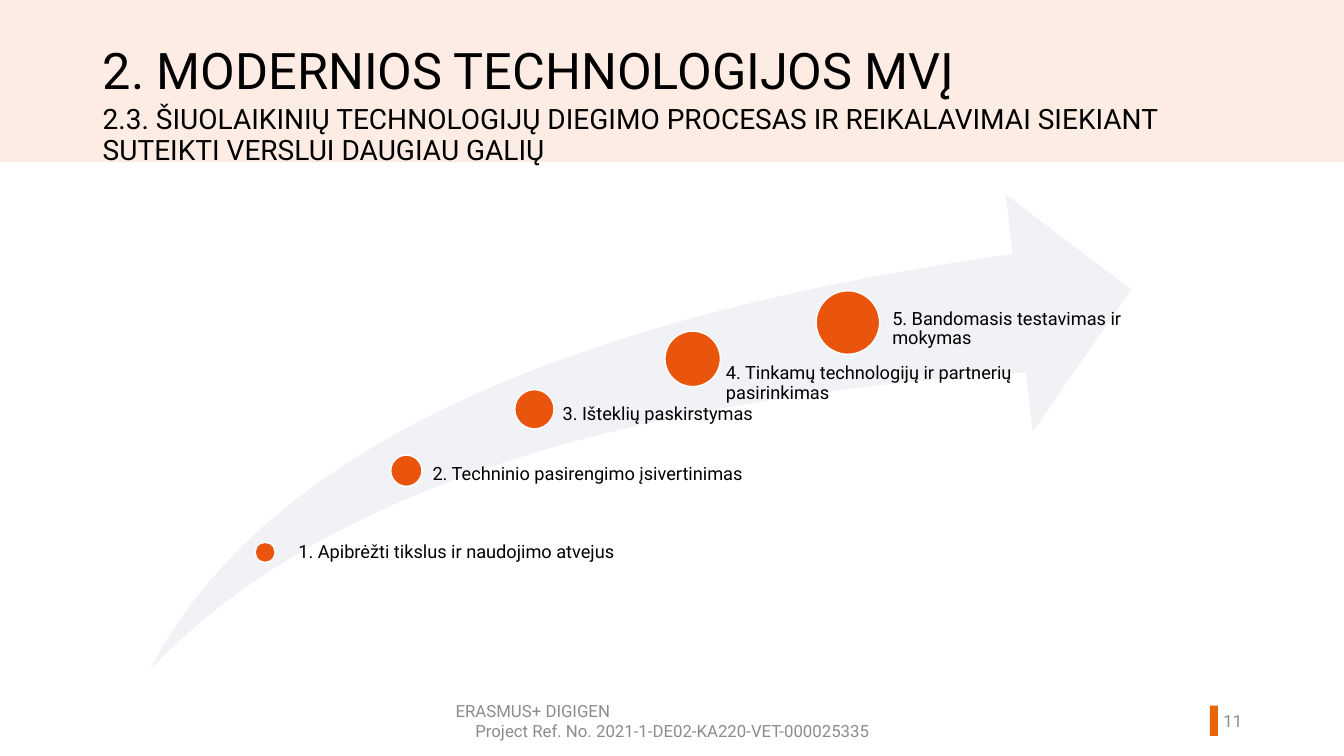
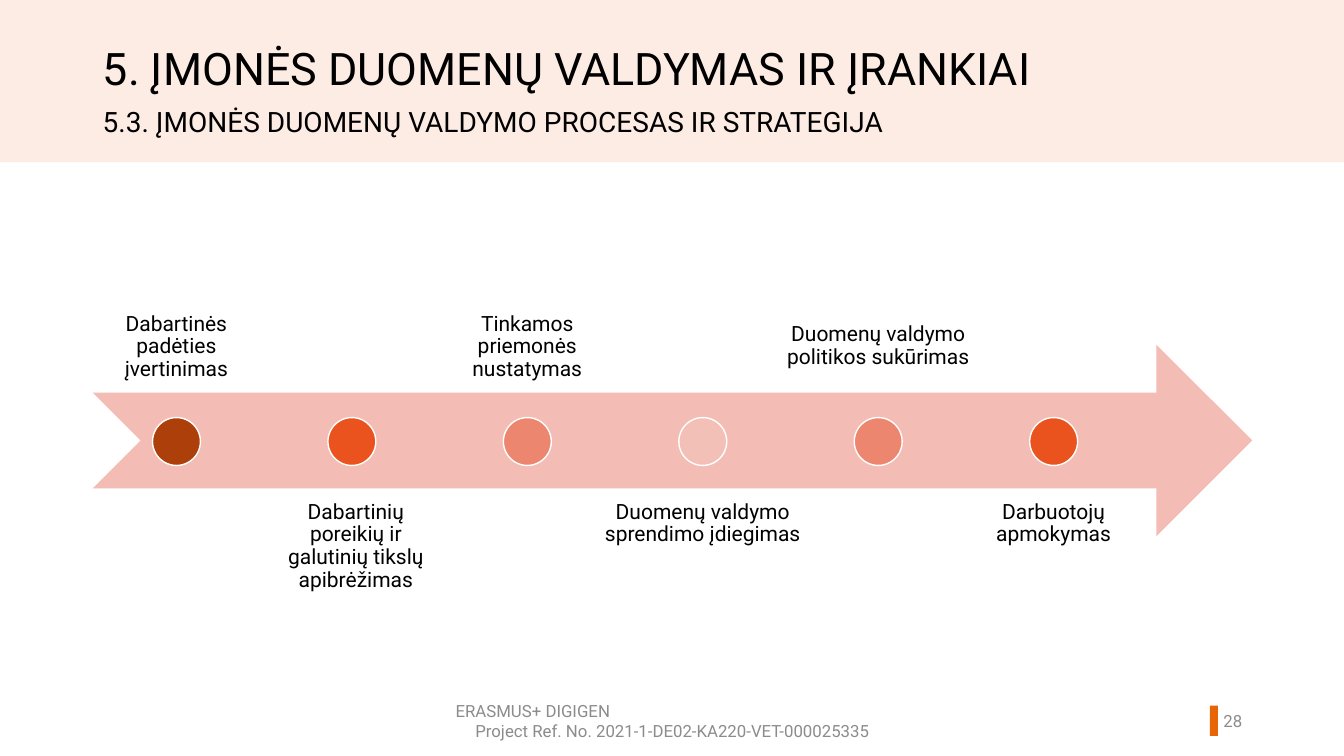
from pptx import Presentation
from pptx.dml.color import RGBColor
from pptx.enum.shapes import MSO_SHAPE
from pptx.enum.text import MSO_ANCHOR, MSO_AUTO_SIZE, PP_ALIGN
from pptx.util import Inches, Pt

FONT = "Roboto"
COLORS = {
    "ink": "000000",
    "muted": "8C8C8C",
    "white": "FFFFFF",
    "band": "FDECE3",
    "marker": "E86507",
    "swoosh": "F0F2F5",
    "step": "E9550D",
    "arrow": "F3BCB4",
    "rust": "AC3F0A",
    "orange": "EA531E",
    "salmon": "EC866E",
    "blush": "F3C0B8",
}
TITLE_BOX = (0.92, 0.41, 10.85, 0.85)
SWOOSH_BOX = (1.49, 1.93, 9.73, 4.71)
TIMELINE_BOX = (0.92, 3.42, 11.5, 1.9)

ADOPTION_STEPS = [
    ("1. Apibrėžti tikslus ir naudojimo atvejus", (1.14, 3.55), 0.2, (1.47, 3.45), 3.36),
    ("2. Techninio pasirengimo įsivertinimas", (2.54, 2.74), 0.31, (2.8, 2.68), 3.32),
    ("3. Išteklių paskirstymas", (3.81, 2.13), 0.39, (4.09, 2.09), 2.82),
    ("4. Tinkamų technologijų ir partnerių pasirinkimas", (5.38, 1.63), 0.55, (5.71, 1.68), 3.52),
    ("5. Bandomasis testavimas ir mokymas", (6.92, 1.27), 0.63, (7.36, 1.14), 2.66),
]
DATA_STAGES = [
    ("Dabartinės padėties įvertinimas", "rust", 1.66, 0, 0),
    ("Dabartinių poreikių ir galutinių tikslų apibrėžimas", "orange", 1.97, 0.04, 0),
    ("Tinkamos priemonės nustatymas", "salmon", 1.66, 0, 0),
    ("Duomenų valdymo sprendimo įdiegimas", "blush", 2.33, 0, 0),
    ("Duomenų valdymo politikos sukūrimas", "salmon", 2.11, 0, -0.12),
    ("Darbuotojų apmokymas", "orange", 1.66, 0, 0),
]


def color(name):
    return RGBColor.from_string(COLORS[name])


def write(box, text, size=12, ink="ink", aligns=(PP_ALIGN.LEFT,),
          anchor=MSO_ANCHOR.TOP, spacing=0.9, insets=(0.1, 0.05)):
    frame = box.text_frame
    frame.text = text
    frame.word_wrap = True
    frame.auto_size = MSO_AUTO_SIZE.NONE
    frame.vertical_anchor = anchor
    frame.margin_left = frame.margin_right = Inches(insets[0])
    frame.margin_top = frame.margin_bottom = Inches(insets[1])
    for para, align in zip(frame.paragraphs, aligns):
        para.alignment = align
        para.line_spacing = spacing
        for span in para.runs:
            span.font.name = FONT
            span.font.size = Pt(size)
            span.font.color.rgb = color(ink)


def add_text(page, area, text, **style):
    box = page.shapes.add_textbox(*map(Inches, area))
    write(box, text, **style)
    return box


def add_figure(page, kind, area, fill, outline=None):
    shape = page.shapes.add_shape(kind, *map(Inches, area))
    shape.shadow.inherit = False
    shape.fill.solid()
    shape.fill.fore_color.rgb = color(fill)
    if outline:
        shape.line.color.rgb = color(outline)
        shape.line.width = Pt(1)
    else:
        shape.line.fill.background()
    return shape


def add_dot(page, center_x, center_y, size, fill):
    area = (center_x - size / 2, center_y - size / 2, size, size)
    add_figure(page, MSO_SHAPE.OVAL, area, fill, "white")


def furnish_layout(layout, page):
    parts = [
        add_figure(page, MSO_SHAPE.RECTANGLE, (0, 0, 13.33, 1.61), "band"),
        add_figure(page, MSO_SHAPE.RECTANGLE, (12, 7, 0.08, 0.3), "marker"),
        add_text(page, (4.42, 6.95, 4.5, 0.4),
                 "ERASMUS+ DIGIGEN\nProject Ref. No. 2021-1-DE02-KA220-VET-000025335",
                 ink="muted", aligns=(PP_ALIGN.LEFT, PP_ALIGN.CENTER),
                 anchor=MSO_ANCHOR.MIDDLE, spacing=1),
    ]
    for index, part in enumerate(parts):
        part.element.nvSpPr.cNvPr.id = 100 + index
        layout.shapes.element.insert(2 + index, part.element)


def add_heading(page, title, title_size, subtitle, subtitle_top, number):
    left, top, width, height = TITLE_BOX
    heading = page.shapes.title
    heading.left, heading.top = Inches(left), Inches(top)
    heading.width, heading.height = Inches(width), Inches(height)
    write(heading, title, size=title_size)
    add_text(page, (left, subtitle_top, width, height), subtitle, size=20)
    add_text(page, (11.77, 6.95, 0.65, 0.4), number, ink="muted",
             aligns=(PP_ALIGN.RIGHT,), anchor=MSO_ANCHOR.MIDDLE, spacing=1)


def add_swoosh(page, area, steps):
    left, top = area[:2]
    swoosh = add_figure(page, MSO_SHAPE.SWOOSH_ARROW, area, "swoosh")
    swoosh.adjustments[0] = swoosh.adjustments[1] = 0.25
    for text, (dot_x, dot_y), size, (text_x, text_y), width in steps:
        add_dot(page, left + dot_x, top + dot_y, size, "step")
        add_text(page, (left + text_x, top + text_y, width, 0.45), text,
                 size=13, insets=(0, 0))


def add_timeline(page, area, stages):
    left, top, width, height = area
    add_figure(page, MSO_SHAPE.NOTCHED_RIGHT_ARROW, area, "arrow")
    first, pitch = left + 0.83, 1.74
    for index, (text, fill, label_width, shift, drop) in enumerate(stages):
        center = first + index * pitch
        above = index % 2 == 0
        label_top = top - 1.42 if above else top + 1.43
        add_dot(page, center, top + height / 2 + 0.01, height / 4, fill)
        add_text(page, (center + shift - label_width / 2, label_top + drop, label_width, height),
                 text, size=15, aligns=(PP_ALIGN.CENTER,), insets=(0.12, 0.12),
                 anchor=MSO_ANCHOR.BOTTOM if above else MSO_ANCHOR.TOP)


def main():
    deck = Presentation()
    deck.slide_width, deck.slide_height = Inches(13.33), Inches(7.5)
    layout = deck.slide_layouts[5]

    page = deck.slides.add_slide(layout)
    furnish_layout(layout, page)
    add_heading(page, "2. MODERNIOS TECHNOLOGIJOS MVĮ", 36,
                "2.3. ŠIUOLAIKINIŲ TECHNOLOGIJŲ DIEGIMO PROCESAS IR REIKALAVIMAI "
                "SIEKIANT SUTEIKTI VERSLUI DAUGIAU GALIŲ", 1, "11")
    add_swoosh(page, SWOOSH_BOX, ADOPTION_STEPS)

    page = deck.slides.add_slide(layout)
    add_heading(page, "5. ĮMONĖS DUOMENŲ VALDYMAS IR ĮRANKIAI", 32,
                "5.3. ĮMONĖS DUOMENŲ VALDYMO PROCESAS IR STRATEGIJA", 1.03, "28")
    add_timeline(page, TIMELINE_BOX, DATA_STAGES)

    deck.save("out.pptx")


if __name__ == "__main__":
    main()
